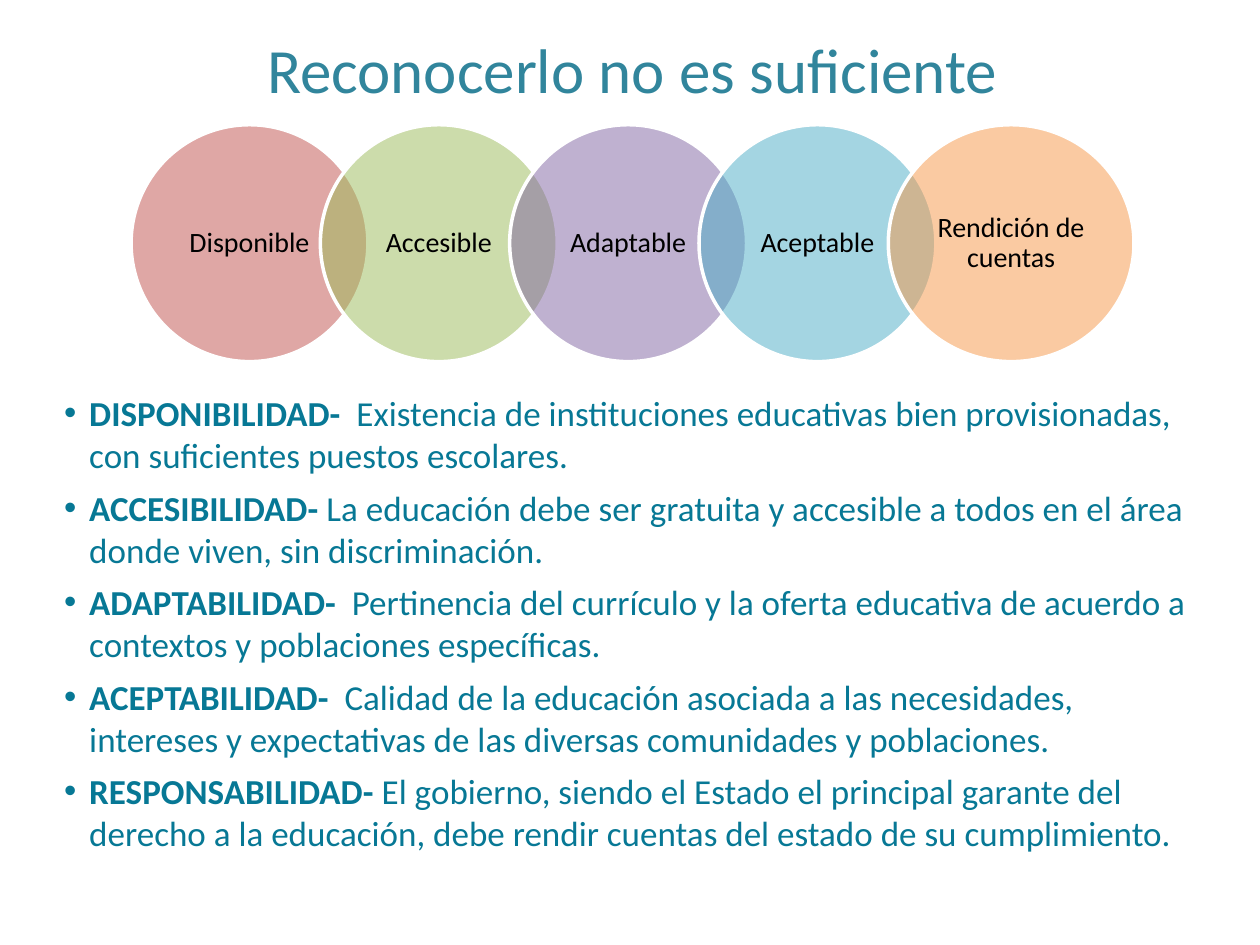
from dataclasses import dataclass

import pptx
import pptx.dml.color
import pptx.enum.shapes
import pptx.enum.text
import pptx.oxml.ns
import pptx.util
from lxml import etree

Inches = pptx.util.Inches
Pt = pptx.util.Pt
ALIGN = pptx.enum.text.PP_ALIGN
ANCHOR = pptx.enum.text.MSO_ANCHOR

FONT = "Calibri"
TITLE_COLOUR = "31859C"
BODY_COLOUR = "077895"
CIRCLE_LEFT, CIRCLE_TOP, CIRCLE_SIZE, CIRCLE_STEP = 1.04, 0.99, 1.88, 1.5025
HANGING = Inches(0.2)


@dataclass
class Criterion:
    label: str
    colour: str
    term: str
    meaning: str
    width: float = CIRCLE_SIZE


CRITERIA = [
    Criterion("Disponible", "C0504D", "DISPONIBILIDAD-",
              "  Existencia de instituciones educativas bien provisionadas, "
              "con suficientes puestos escolares."),
    Criterion("Accesible", "9BBB59", "ACCESIBILIDAD- ",
              "La educación debe ser gratuita y accesible a todos en el área "
              "donde viven, sin discriminación."),
    Criterion("Adaptable", "8064A2", "ADAPTABILIDAD- ",
              " Pertinencia del currículo y la oferta educativa de acuerdo a "
              "contextos y poblaciones específicas."),
    Criterion("Aceptable", "4BACC6", "ACEPTABILIDAD-",
              "  Calidad de la educación asociada a las necesidades, intereses y "
              "expectativas de las diversas comunidades y poblaciones."),
    Criterion("Rendición de cuentas", "F79646", "RESPONSABILIDAD- ",
              "El gobierno, siendo el Estado el principal garante del derecho a "
              "la educación, debe rendir cuentas del estado de su cumplimiento.",
              width=1.95),
]


def rgb(colour: str) -> pptx.dml.color.RGBColor:
    return pptx.dml.color.RGBColor.from_string(colour)


def add_run(paragraph, text: str, size: float, colour: str, bold: bool = False) -> None:
    run = paragraph.add_run()
    run.text = text
    run.font.name = FONT
    run.font.size = Pt(size)
    run.font.bold = bold
    run.font.color.rgb = rgb(colour)


def set_opacity(shape, percent: int) -> None:
    fill_colour = shape.fill._xPr.find(".//" + pptx.oxml.ns.qn("a:srgbClr"))
    alpha = etree.SubElement(fill_colour, pptx.oxml.ns.qn("a:alpha"))
    alpha.set("val", str(percent * 1000))


def set_bullet(paragraph) -> None:
    """Hang the paragraph behind a round bullet."""
    properties = paragraph._p.get_or_add_pPr()
    properties.set("marL", str(HANGING))
    properties.set("indent", str(-HANGING))
    font = etree.SubElement(properties, pptx.oxml.ns.qn("a:buFont"))
    font.set("typeface", "Arial")
    bullet = etree.SubElement(properties, pptx.oxml.ns.qn("a:buChar"))
    bullet.set("char", "•")


def add_title(slide, text: str) -> None:
    title = slide.shapes.add_textbox(Inches(0.65), Inches(-0.06), Inches(8.74), Inches(1.21))
    frame = title.text_frame
    frame.word_wrap = True
    frame.vertical_anchor = ANCHOR.MIDDLE
    paragraph = frame.paragraphs[0]
    paragraph.alignment = ALIGN.CENTER
    add_run(paragraph, text, 36, TITLE_COLOUR)


def add_definitions(slide, criteria: list[Criterion]) -> None:
    definitions = slide.shapes.add_textbox(Inches(0.41), Inches(3.06), Inches(9.21), Inches(4.02))
    frame = definitions.text_frame
    frame.word_wrap = True
    for index, criterion in enumerate(criteria):
        paragraph = frame.add_paragraph() if index else frame.paragraphs[0]
        paragraph.space_before = Pt(6)
        set_bullet(paragraph)
        add_run(paragraph, criterion.term, 20, BODY_COLOUR, bold=True)
        add_run(paragraph, criterion.meaning, 20, BODY_COLOUR)


def add_circle(slide, index: int, criterion: Criterion) -> None:
    circle = slide.shapes.add_shape(
        pptx.enum.shapes.MSO_SHAPE.OVAL,
        Inches(CIRCLE_LEFT + index * CIRCLE_STEP), Inches(CIRCLE_TOP),
        Inches(criterion.width), Inches(CIRCLE_SIZE))
    circle.shadow.inherit = False
    circle.fill.solid()
    circle.fill.fore_color.rgb = rgb(criterion.colour)
    set_opacity(circle, 50)
    circle.line.color.rgb = rgb("FFFFFF")
    circle.line.width = Pt(2)

    frame = circle.text_frame
    frame.word_wrap = True
    frame.vertical_anchor = ANCHOR.MIDDLE
    frame.margin_left = frame.margin_right = Inches(0.09)
    frame.margin_top = frame.margin_bottom = Inches(0.02)
    paragraph = frame.paragraphs[0]
    paragraph.alignment = ALIGN.CENTER
    paragraph.line_spacing = 0.9
    add_run(paragraph, criterion.label, 16, "000000")


def main() -> None:
    deck = pptx.Presentation()
    deck.slide_width, deck.slide_height = Inches(10), Inches(7.5)
    slide = deck.slides.add_slide(deck.slide_layouts[6])
    add_title(slide, "Reconocerlo no es suficiente")
    add_definitions(slide, CRITERIA)
    for index, criterion in enumerate(CRITERIA):
        add_circle(slide, index, criterion)
    deck.save("out.pptx")


if __name__ == "__main__":
    main()
